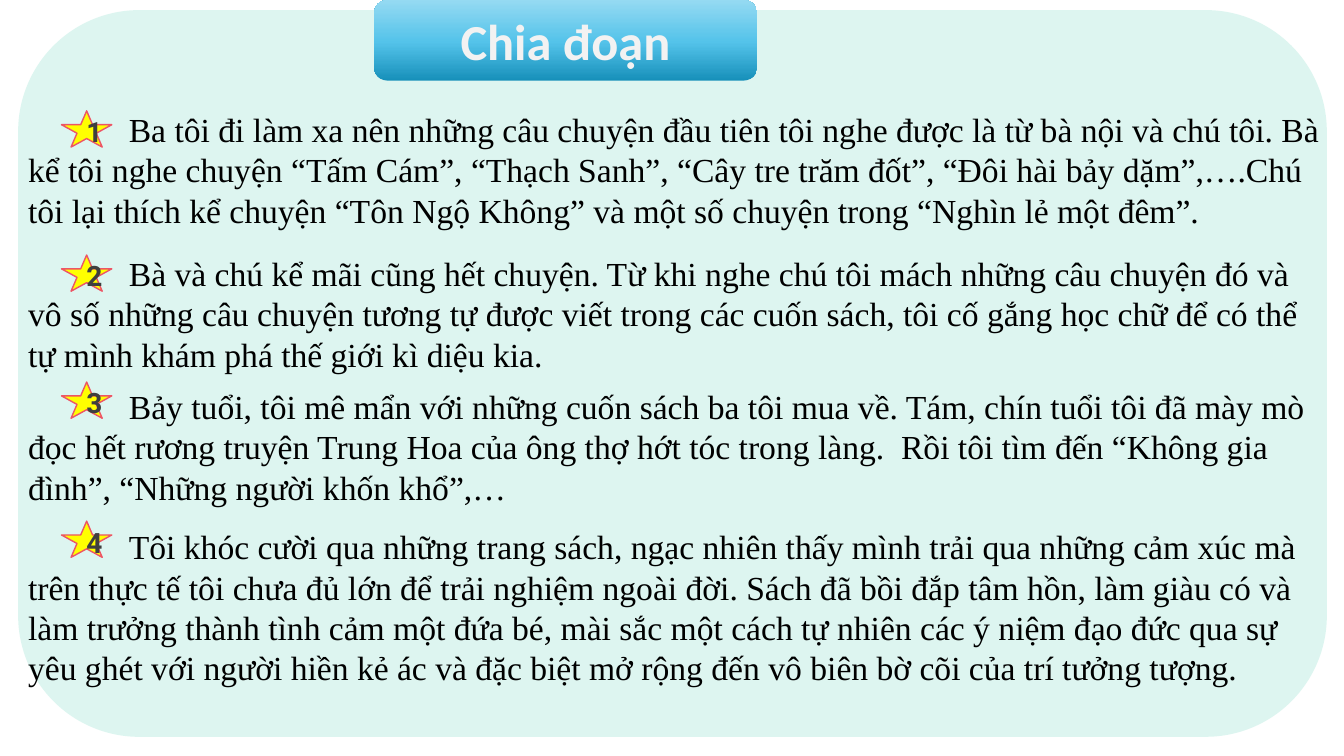
from copy import deepcopy

from lxml.etree import SubElement
from pptx import Presentation
from pptx.dml.color import RGBColor
from pptx.enum.shapes import MSO_SHAPE
from pptx.enum.text import MSO_ANCHOR, MSO_AUTO_SIZE, PP_ALIGN
from pptx.oxml.ns import qn
from pptx.util import Emu, Pt

EMU_PER_PX = 9144
SLIDE_SIZE = (1333, 750)
PANEL_BOX = (18, 10, 1298, 721)
TITLE_BOX = (371, 0, 380, 80)
TITLE_STOPS = [(0, "1790BA"), (0.48, "54C3EA"), (1, "95DAF2")]
STAR_LEFT, STAR_WIDTH, STAR_HEIGHT = 43, 50, 36
PASSAGE_TAB = 100

SECTIONS = [
    ((18, 103, 1316, 131), 7,
     "Ba tôi đi làm xa nên những câu chuyện đầu tiên tôi nghe được là từ bà nội và chú tôi. "
     "Bà kể tôi nghe chuyện “Tấm Cám”, “Thạch Sanh”, “Cây tre trăm đốt”, “Đôi hài bảy dặm”,….Chú "
     "tôi lại thích kể chuyện “Tôn Ngộ Không” và một số chuyện trong “Nghìn lẻ một đêm”."),
    ((18, 246, 1298, 131), 7,
     "Bà và chú kể mãi cũng hết chuyện. Từ khi nghe chú tôi mách những câu chuyện đó và "
     "vô số những câu chuyện tương tự được viết trong các cuốn sách, tôi cố gắng học chữ để có thể "
     "tự mình khám phá thế giới kì diệu kia."),
    ((18, 378, 1298, 131), 1,
     "Bảy tuổi, tôi mê mẩn với những cuốn sách ba tôi mua về. Tám, chín tuổi tôi đã mày mò "
     "đọc hết rương truyện Trung Hoa của ông thợ hớt tóc trong làng.  Rồi tôi tìm đến “Không gia "
     "đình”, “Những người khốn khổ”,…"),
    ((18, 517, 1298, 172), 0,
     "Tôi khóc cười qua những trang sách, ngạc nhiên thấy mình trải qua những cảm xúc mà "
     "trên thực tế tôi chưa đủ lớn để trải nghiệm ngoài đời. Sách đã bồi đắp tâm hồn, làm giàu có và "
     "làm trưởng thành tình cảm một đứa bé, mài sắc một cách tự nhiên các ý niệm đạo đức qua sự "
     "yêu ghét với người hiền kẻ ác và đặc biệt mở rộng đến vô biên bờ cõi của trí tưởng tượng."),
]


def px(length):
    return Emu(length * EMU_PER_PX)


def color(hex_code):
    return RGBColor.from_string(hex_code)


def add_preset(slide, preset, box, fill=None):
    shape = slide.shapes.add_shape(preset, *map(px, box))
    shape.shadow.inherit = False
    shape.line.fill.background()
    if fill:
        shape.fill.solid()
        shape.fill.fore_color.rgb = color(fill)
    return shape


def add_tab_stop(paragraph, position):
    tab_list = SubElement(paragraph._p.get_or_add_pPr(), qn("a:tabLst"))
    SubElement(tab_list, qn("a:tab"), pos=str(px(position)), algn="l")


def write(frame, text, font_name, size, font_color, bold=False, align=PP_ALIGN.LEFT):
    frame.word_wrap = True
    paragraph = frame.paragraphs[0]
    paragraph.text = text
    paragraph.alignment = align
    paragraph.font.name = font_name
    paragraph.font.size = Pt(size)
    paragraph.font.bold = bold
    paragraph.font.color.rgb = color(font_color)


def add_panel(slide, box):
    panel = add_preset(slide, MSO_SHAPE.ROUNDED_RECTANGLE, box, "DAF5EF")
    tint = panel.fill._xPr.find(qn("a:solidFill"))[0]
    SubElement(tint, qn("a:alpha"), val="90000")


def add_title(slide, box):
    title = add_preset(slide, MSO_SHAPE.ROUNDED_RECTANGLE, box)
    title.fill.gradient()
    title.fill.gradient_angle = 90
    stop_list = title.fill._xPr.find(qn("a:gradFill")).find(qn("a:gsLst"))
    stop_list.append(deepcopy(stop_list[0]))
    for stop, (position, stop_color) in zip(title.fill.gradient_stops, TITLE_STOPS):
        stop.position = position
        stop.color.rgb = color(stop_color)
    title.text_frame.vertical_anchor = MSO_ANCHOR.MIDDLE
    write(title.text_frame, "Chia đoạn", "Calibri", 36, "F2F2F2", True, PP_ALIGN.CENTER)


def add_section(slide, box, number, star_drop, passage):
    left, top, _, _ = box
    passage_frame = slide.shapes.add_textbox(*map(px, box)).text_frame
    add_tab_stop(passage_frame.paragraphs[0], PASSAGE_TAB)
    write(passage_frame, "\t" + passage, "Times New Roman", 24, "000000")
    passage_frame.auto_size = MSO_AUTO_SIZE.SHAPE_TO_FIT_TEXT

    star_box = (left + STAR_LEFT, top + star_drop, STAR_WIDTH, STAR_HEIGHT)
    star = add_preset(slide, MSO_SHAPE.STAR_5_POINT, star_box, "FFFF00")
    star.line.color.rgb = color("ED5565")
    star.line.width = Pt(1)
    star.text_frame.vertical_anchor = MSO_ANCHOR.MIDDLE
    write(star.text_frame, str(number), "Roboto", 20, "3F3F3F", True, PP_ALIGN.CENTER)


def main():
    presentation = Presentation()
    presentation.slide_width, presentation.slide_height = map(px, SLIDE_SIZE)
    slide = presentation.slides.add_slide(presentation.slide_layouts[6])
    add_panel(slide, PANEL_BOX)
    for number, (box, star_drop, passage) in enumerate(SECTIONS, start=1):
        add_section(slide, box, number, star_drop, passage)
    add_title(slide, TITLE_BOX)
    presentation.save("out.pptx")


if __name__ == "__main__":
    main()
